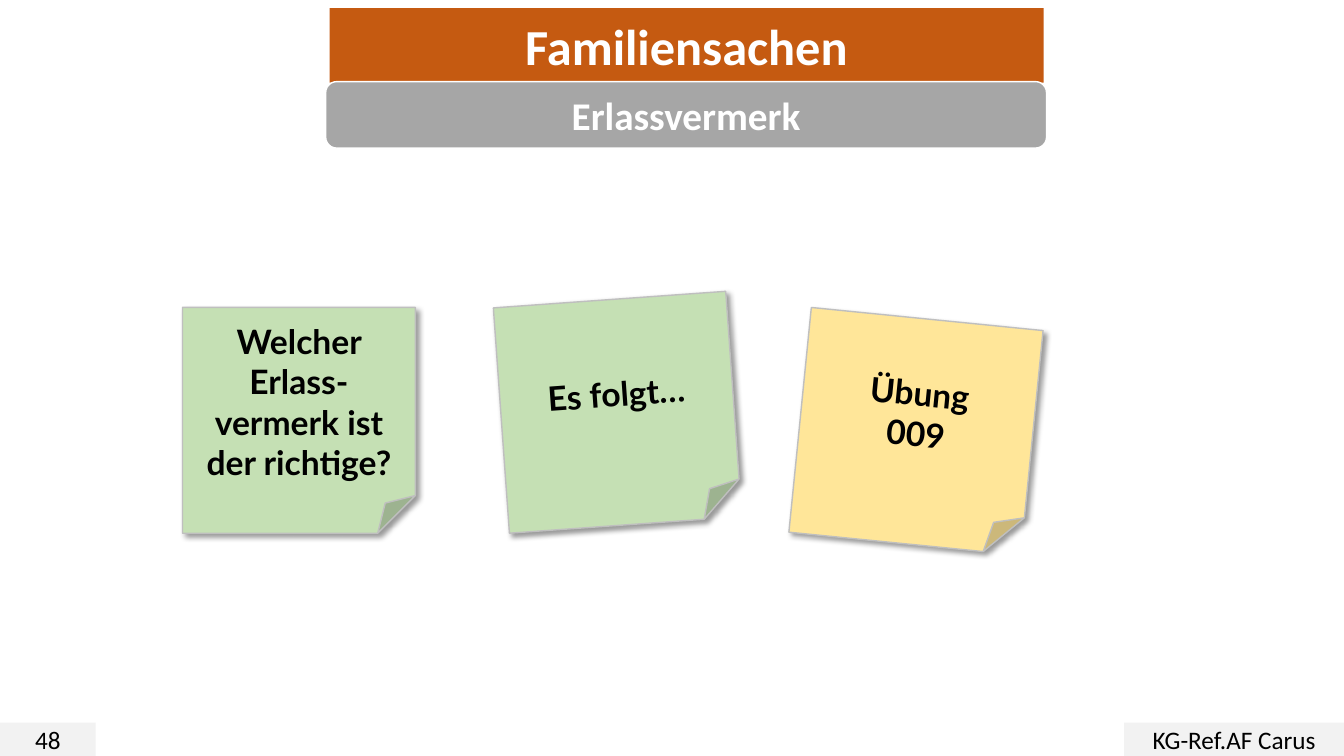
from lxml import etree
from pptx import Presentation
from pptx.dml.color import RGBColor
from pptx.enum import shapes, text
from pptx.oxml import ns
from pptx.util import Inches, Pt

WHITE = RGBColor(0xFF, 0xFF, 0xFF)
BLACK = RGBColor(0x00, 0x00, 0x00)
ORANGE = RGBColor(0xC5, 0x5A, 0x11)
GREY = RGBColor(0xA6, 0xA6, 0xA6)
PALE_GREY = RGBColor(0xF2, 0xF2, 0xF2)
EDGE_GREY = RGBColor(0xBF, 0xBF, 0xBF)
GREEN = RGBColor(0xC5, 0xE0, 0xB4)
YELLOW = RGBColor(0xFF, 0xE6, 0x99)

NOTE_WIDTH, NOTE_HEIGHT = 2.31, 2.24


class Page:
    body_font = "Calibri"
    note_font = "Lato"

    def __init__(self, deck):
        self.slide = deck.slides.add_slide(deck.slide_layouts[5])

    def paint(self, box, fill, edge=None):
        box.fill.solid()
        box.fill.fore_color.rgb = fill
        if edge is None:
            box.line.fill.background()
        else:
            box.line.color.rgb = edge
            box.line.width = Pt(1)

    def add_lines(self, box, lines, size, color, font, bold=False):
        frame = box.text_frame
        frame.word_wrap = True
        frame.auto_size = text.MSO_AUTO_SIZE.NONE
        frame.vertical_anchor = text.MSO_ANCHOR.MIDDLE
        for index, line in enumerate(lines):
            para = frame.add_paragraph() if index else frame.paragraphs[0]
            para.alignment = text.PP_ALIGN.CENTER
            span = para.add_run()
            span.text = line
            span.font.name = font
            span.font.size = Pt(size)
            span.font.bold = bold
            span.font.color.rgb = color

    def shape(self, kind, left, top, width, height):
        box = self.slide.shapes.add_shape(
            kind, Inches(left), Inches(top), Inches(width), Inches(height))
        box.shadow.inherit = False
        return box

    def title(self, words, left, top, width, height):
        """Turn the title placeholder into a rounded orange banner."""
        box = self.slide.shapes.title
        box.left, box.top = Inches(left), Inches(top)
        box.width, box.height = Inches(width), Inches(height)
        outline = etree.SubElement(
            box.element.spPr, ns.qn("a:prstGeom"), prst="roundRect")
        etree.SubElement(outline, ns.qn("a:avLst"))
        self.paint(box, ORANGE)
        self.add_lines(box, [words], 36, WHITE, self.body_font, bold=True)

    def subtitle(self, words, left, top, width, height):
        box = self.shape(shapes.MSO_SHAPE.ROUNDED_RECTANGLE,
                         left, top, width, height)
        self.paint(box, GREY, WHITE)
        self.add_lines(box, [words], 28, WHITE, self.body_font, bold=True)

    def footer(self, words, left, width):
        box = self.shape(shapes.MSO_SHAPE.RECTANGLE, left, 7.17, width, 0.33)
        self.paint(box, PALE_GREY)
        self.add_lines(box, [words], 18, BLACK, self.body_font)

    def note(self, lines, left, top, fill, angle=0):
        box = self.shape(shapes.MSO_SHAPE.FOLDED_CORNER,
                         left, top, NOTE_WIDTH, NOTE_HEIGHT)
        box.rotation = angle
        self.paint(box, fill, EDGE_GREY)
        self.cast_shadow(box)
        self.add_lines(box, lines, 24, BLACK, self.note_font, bold=True)

    def cast_shadow(self, box):
        """Add a soft shadow towards the lower right."""
        effects = box.element.spPr.find(ns.qn("a:effectLst"))
        shadow = etree.SubElement(
            effects, ns.qn("a:outerShdw"), blurRad=str(Pt(4)),
            dist=str(Pt(3)), dir=str(45 * 60000), algn="tl",
            rotWithShape="0")
        color = etree.SubElement(shadow, ns.qn("a:srgbClr"), val=str(BLACK))
        etree.SubElement(color, ns.qn("a:alpha"), val="40000")


def main():
    deck = Presentation()
    deck.slide_width, deck.slide_height = Inches(13.33), Inches(7.5)
    page = Page(deck)
    page.title("Familiensachen", 3.27, 0.08, 7.08, 0.74)
    page.footer("48", 0, 0.95)
    page.footer("KG-Ref.AF Carus", 11.15, 2.18)
    page.subtitle("Erlassvermerk", 3.23, 0.81, 7.15, 0.66)
    page.note(["Welcher Erlass-vermerk ist der richtige?"], 1.81, 3.05, GREEN)
    page.note(["Übung", "009"], 7.93, 3.16, YELLOW, 5.7)
    page.note(["Es folgt…"], 4.97, 2.97, GREEN, -4.1)
    deck.save("out.pptx")


if __name__ == "__main__":
    main()
